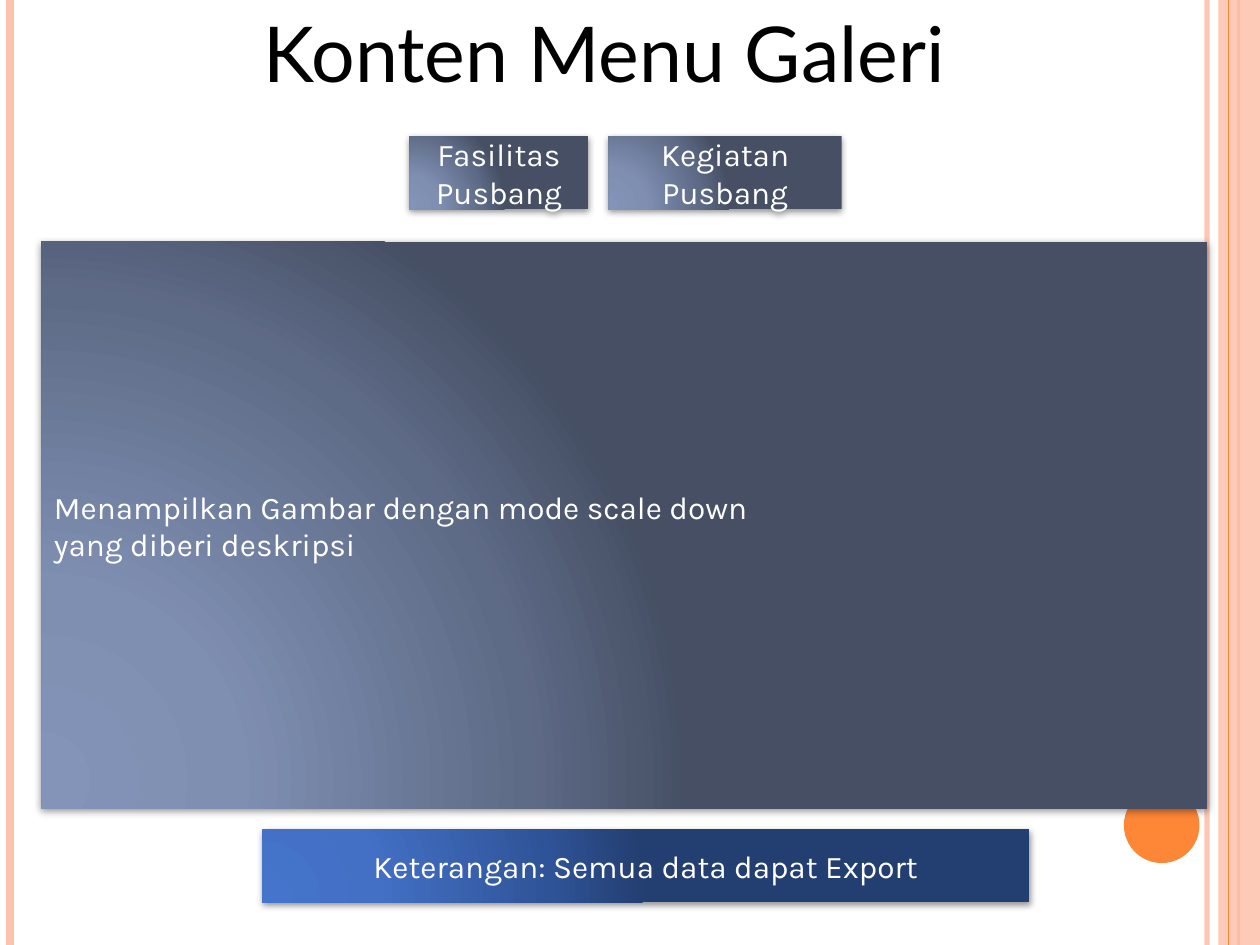
from dataclasses import dataclass

from lxml.etree import SubElement
from pptx import Presentation
from pptx.dml.color import RGBColor
from pptx.enum.shapes import MSO_CONNECTOR, MSO_SHAPE
from pptx.enum.text import MSO_ANCHOR, MSO_AUTO_SIZE, PP_ALIGN
from pptx.oxml.ns import qn
from pptx.util import Inches, Pt

PEACH = RGBColor(0xFE, 0xC3, 0xAE)
ORANGE = RGBColor(0xFE, 0x86, 0x37)
WHITE = RGBColor(0xFF, 0xFF, 0xFF)
BLACK = RGBColor(0x00, 0x00, 0x00)

SLATE = tuple(map(RGBColor.from_string, ("8494B9", "7F8FB2", "5E6B87", "464F64")))
BLUE = tuple(map(RGBColor.from_string, ("4574CC", "4370C5", "2F5397", "233E70")))
STOPS = (0, 30, 75, 100)
FOCUS = {"l": 5, "t": 100, "r": 120, "b": 10}

SLIDE_WIDTH, SLIDE_HEIGHT = 10, 7.5


@dataclass(frozen=True)
class Rule:
    x: float
    color: RGBColor
    width: float
    opacity: int = 100


@dataclass(frozen=True)
class Panel:
    left: float
    top: float
    width: float
    height: float
    lines: tuple[str, ...]
    colors: tuple[RGBColor, ...] = SLATE
    align: PP_ALIGN = PP_ALIGN.CENTER


LEFT_RULES = (Rule(9.58, PEACH, 3, 93), Rule(0.08, PEACH, 4.5), Rule(9.83, ORANGE, 1.5))
BAND_RULE = Rule(9.75, ORANGE, 0.75)

PANELS = (
    Panel(3.25, 1.08, 1.42, 0.58, ("Fasilitas Pusbang",)),
    Panel(4.83, 1.08, 1.85, 0.58, ("Kegiatan Pusbang",)),
    Panel(0.33, 1.92, 9.25, 4.5,
          ("Menampilkan Gambar dengan mode scale down", "yang diberi deskripsi"),
          align=PP_ALIGN.LEFT),
    Panel(2.08, 6.58, 6.09, 0.58, ("Keterangan: Semua data dapat Export",), BLUE),
)


def percent(value: float) -> str:
    return str(int(value * 1000))


def set_opacity(solid_fill, opacity: int) -> None:
    SubElement(solid_fill[0], qn("a:alpha"), val=percent(opacity))


def draw_rule(slide, rule: Rule) -> None:
    line = slide.shapes.add_connector(
        MSO_CONNECTOR.STRAIGHT,
        Inches(rule.x), 0, Inches(rule.x), Inches(SLIDE_HEIGHT))
    line.line.color.rgb = rule.color
    line.line.width = Pt(rule.width)
    properties = line._element.spPr
    if rule.opacity < 100:
        set_opacity(properties.find(".//" + qn("a:solidFill")), rule.opacity)
    SubElement(properties, qn("a:effectLst"))


def add_plain_shape(slide, kind: MSO_SHAPE, left: float, top: float,
                    width: float, height: float):
    shape = slide.shapes.add_shape(
        kind, Inches(left), Inches(top), Inches(width), Inches(height))
    shape.line.fill.background()
    shape.shadow.inherit = False
    return shape


def add_solid_shape(slide, kind: MSO_SHAPE, left: float, top: float,
                    width: float, height: float, color: RGBColor):
    shape = add_plain_shape(slide, kind, left, top, width, height)
    shape.fill.solid()
    shape.fill.fore_color.rgb = color
    return shape


def fill_radial(shape, colors: tuple[RGBColor, ...]) -> None:
    shape.fill.background()
    properties = shape._element.spPr
    gradient = SubElement(properties, qn("a:gradFill"), rotWithShape="1")
    stops = SubElement(gradient, qn("a:gsLst"))
    for position, color in zip(STOPS, colors):
        stop = SubElement(stops, qn("a:gs"), pos=percent(position))
        SubElement(stop, qn("a:srgbClr"), val=str(color))
    circle = SubElement(gradient, qn("a:path"), path="circle")
    SubElement(circle, qn("a:fillToRect"),
               {side: percent(value) for side, value in FOCUS.items()})
    properties.replace(properties.find(qn("a:noFill")), gradient)


def cast_shadow(shape) -> None:
    effects = shape._element.spPr.find(qn("a:effectLst"))
    shadow = SubElement(effects, qn("a:outerShdw"), blurRad=str(Pt(4)),
                        dist=str(Pt(1.6)), dir=str(90 * 60000), rotWithShape="0")
    color = SubElement(shadow, qn("a:srgbClr"), val=str(BLACK))
    SubElement(color, qn("a:alpha"), val=percent(42))


def write_line(paragraph, text: str, font: str, size: float,
               color: RGBColor, align: PP_ALIGN) -> None:
    paragraph.alignment = align
    run = paragraph.add_run()
    run.text = text
    run.font.name = font
    run.font.size = Pt(size)
    run.font.color.rgb = color


def draw_panel(slide, panel: Panel) -> None:
    shape = add_plain_shape(slide, MSO_SHAPE.RECTANGLE, panel.left, panel.top,
                            panel.width, panel.height)
    fill_radial(shape, panel.colors)
    cast_shadow(shape)
    frame = shape.text_frame
    frame.word_wrap = True
    frame.vertical_anchor = MSO_ANCHOR.MIDDLE
    for index, text in enumerate(panel.lines):
        paragraph = frame.add_paragraph() if index else frame.paragraphs[0]
        write_line(paragraph, text, "Karla", 18, WHITE, panel.align)


def draw_title(slide, text: str) -> None:
    title = slide.shapes.title
    title.left, title.top = Inches(-0.08), Inches(-0.01)
    title.width, title.height = Inches(9.75), Inches(1.25)
    frame = title.text_frame
    frame.word_wrap = True
    frame.auto_size = MSO_AUTO_SIZE.NONE
    frame.vertical_anchor = MSO_ANCHOR.TOP
    write_line(frame.paragraphs[0], text, "Lato", 44, BLACK, PP_ALIGN.CENTER)


def draw_frame(slide) -> None:
    """Draw the rules, side band and disc that border the content."""
    for rule in LEFT_RULES:
        draw_rule(slide, rule)
    band = add_solid_shape(slide, MSO_SHAPE.RECTANGLE, 9.67, 0, 0.33, SLIDE_HEIGHT, PEACH)
    set_opacity(band._element.spPr.find(qn("a:solidFill")), 87)
    draw_rule(slide, BAND_RULE)
    add_solid_shape(slide, MSO_SHAPE.OVAL, 8.92, 6.25, 0.6, 0.6, ORANGE)


def main() -> None:
    deck = Presentation()
    deck.slide_width, deck.slide_height = Inches(SLIDE_WIDTH), Inches(SLIDE_HEIGHT)
    slide = deck.slides.add_slide(deck.slide_layouts.get_by_name("Title Only"))
    draw_frame(slide)
    draw_title(slide, "Konten Menu Galeri")
    for panel in PANELS:
        draw_panel(slide, panel)
    deck.save("out.pptx")


if __name__ == "__main__":
    main()
